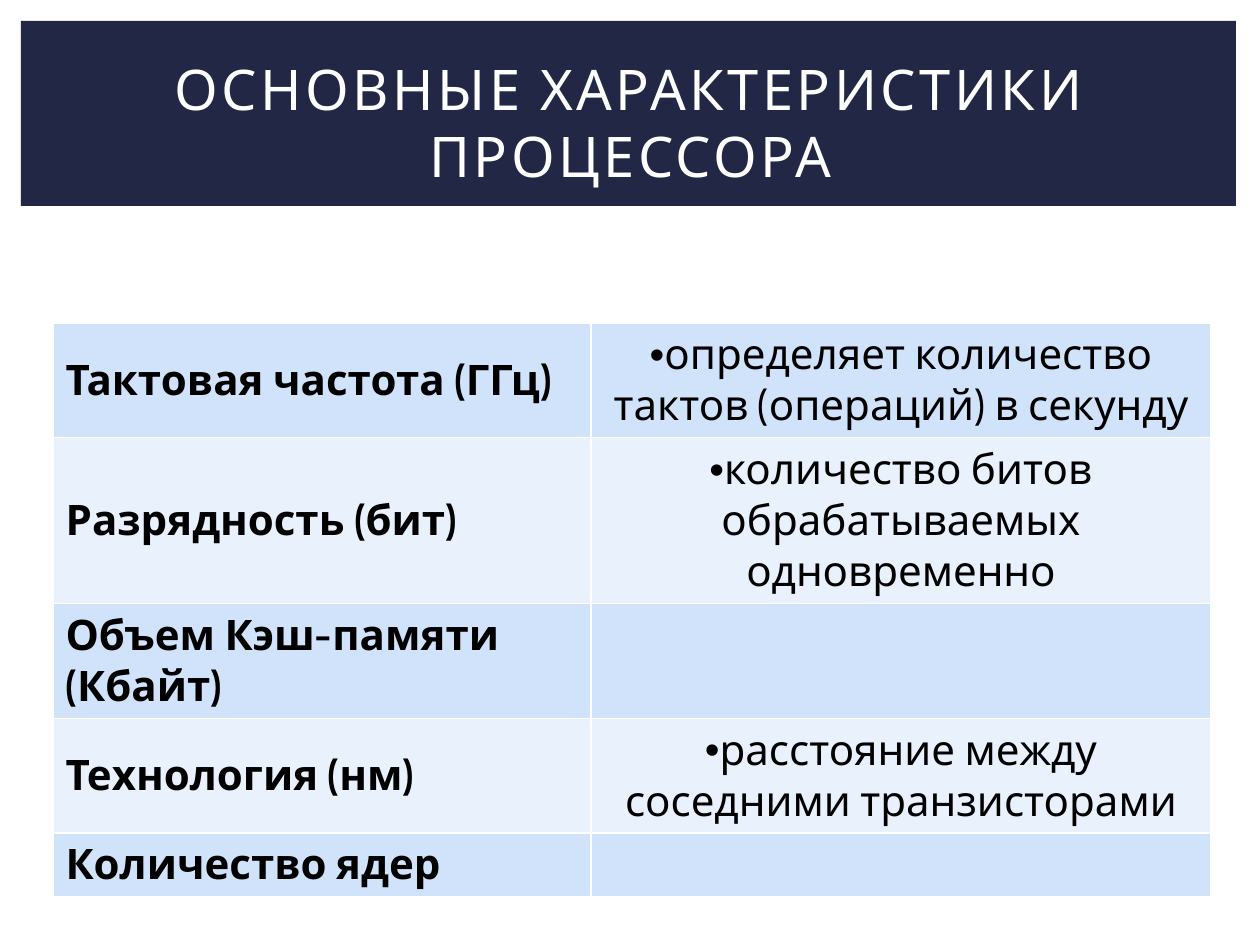
from dataclasses import dataclass

from lxml.etree import SubElement
from pptx import Presentation
from pptx.dml.color import RGBColor
from pptx.enum.shapes import MSO_SHAPE
from pptx.enum.text import MSO_ANCHOR, MSO_AUTO_SIZE, PP_ALIGN
from pptx.oxml import parse_xml
from pptx.oxml.ns import nsdecls, qn
from pptx.util import Pt

# Content
TITLE = "ОСНОВНЫЕ ХАРАКТЕРИСТИКИ ПРОЦЕССОРА"
CHARACTERISTICS = [
    ("Тактовая частота (ГГц)", "определяет количество тактов (операций) в секунду"),
    ("Разрядность (бит)", "количество битов обрабатываемых одновременно"),
    ("Объем Кэш-памяти (Кбайт)", ""),
    ("Технология (нм)", "расстояние между соседними транзисторами"),
    ("Количество ядер", ""),
]


@dataclass(frozen=True)
class Theme:
    font: str = "Cabin"
    title_size: int = 32
    table_size: int = 24
    title_spacing: int = 200
    band: str = "212745"
    title_text: str = "FFFFFF"
    table_text: str = "000000"
    border: str = "FFFFFF"
    rows: tuple = ("D0E3FA", "E9F1FD")


THEME = Theme()

# Geometry in px, 126 to the inch
PX = 914400 / 126
SLIDE_SIZE = (1260, 945)
BAND_BOX = (21, 21, 1215, 185)
TITLE_BOX = (53, 49, 1155, 145)
TABLE_LEFT, TABLE_TOP = 53, 323
COLUMN_WIDTHS = (538, 620)
ROW_HEIGHT = 52


def px(length):
    return round(length * PX)


def style_font(font, size, color, bold=False):
    font.name = THEME.font
    font.size = Pt(size)
    font.bold = bold
    font.color.rgb = RGBColor.from_string(color)


def add_title(slide):
    title = slide.shapes.title
    title.left, title.top, title.width, title.height = map(px, TITLE_BOX)
    frame = title.text_frame
    frame.text = TITLE
    frame.word_wrap = True
    frame.auto_size = MSO_AUTO_SIZE.NONE
    frame.vertical_anchor = MSO_ANCHOR.MIDDLE
    paragraph = frame.paragraphs[0]
    paragraph.alignment = PP_ALIGN.CENTER
    run = paragraph.runs[0]
    style_font(run.font, THEME.title_size, THEME.title_text)
    run.font._element.set("spc", str(THEME.title_spacing))

    # Band behind the title
    band = slide.shapes.add_shape(MSO_SHAPE.RECTANGLE, *map(px, BAND_BOX))
    band.shadow.inherit = False
    band.fill.solid()
    band.fill.fore_color.rgb = RGBColor.from_string(THEME.band)
    band.line.fill.background()
    title.element.addprevious(band.element)


def style_cell(cell, fill):
    cell.vertical_anchor = MSO_ANCHOR.MIDDLE
    cell.fill.solid()
    cell.fill.fore_color.rgb = RGBColor.from_string(fill)
    properties = cell._tc.get_or_add_tcPr()
    for index, side in enumerate(("lnL", "lnR", "lnT", "lnB")):
        properties.insert(index, parse_xml(
            f'<a:{side} {nsdecls("a")} w="12700"><a:solidFill>'
            f'<a:srgbClr val="{THEME.border}"/></a:solidFill></a:{side}>'))


def add_bullet(paragraph):
    properties = paragraph._p.get_or_add_pPr()
    properties.set("marL", "0")
    properties.set("indent", "0")
    SubElement(properties, qn("a:buFont")).set("typeface", "Arial")
    SubElement(properties, qn("a:buChar")).set("char", "•")


def add_characteristics(slide):
    count = len(CHARACTERISTICS)
    table = slide.shapes.add_table(
        count, len(COLUMN_WIDTHS), px(TABLE_LEFT), px(TABLE_TOP),
        px(sum(COLUMN_WIDTHS)), px(ROW_HEIGHT * count)).table
    table.first_row = False
    for column, width in zip(table.columns, COLUMN_WIDTHS):
        column.width = px(width)
    for row_index, texts in enumerate(CHARACTERISTICS):
        table.rows[row_index].height = px(ROW_HEIGHT)
        for column_index, text in enumerate(texts):
            cell = table.cell(row_index, column_index)
            style_cell(cell, THEME.rows[row_index % 2])
            if not text:
                continue
            cell.text_frame.text = text
            paragraph = cell.text_frame.paragraphs[0]
            is_name = column_index == 0
            if not is_name:
                paragraph.alignment = PP_ALIGN.CENTER
                add_bullet(paragraph)
            style_font(paragraph.runs[0].font, THEME.table_size,
                       THEME.table_text, is_name)


def main():
    presentation = Presentation()
    presentation.slide_width, presentation.slide_height = map(px, SLIDE_SIZE)
    slide = presentation.slides.add_slide(presentation.slide_layouts[5])
    add_title(slide)
    add_characteristics(slide)
    presentation.save("out.pptx")


if __name__ == "__main__":
    main()
